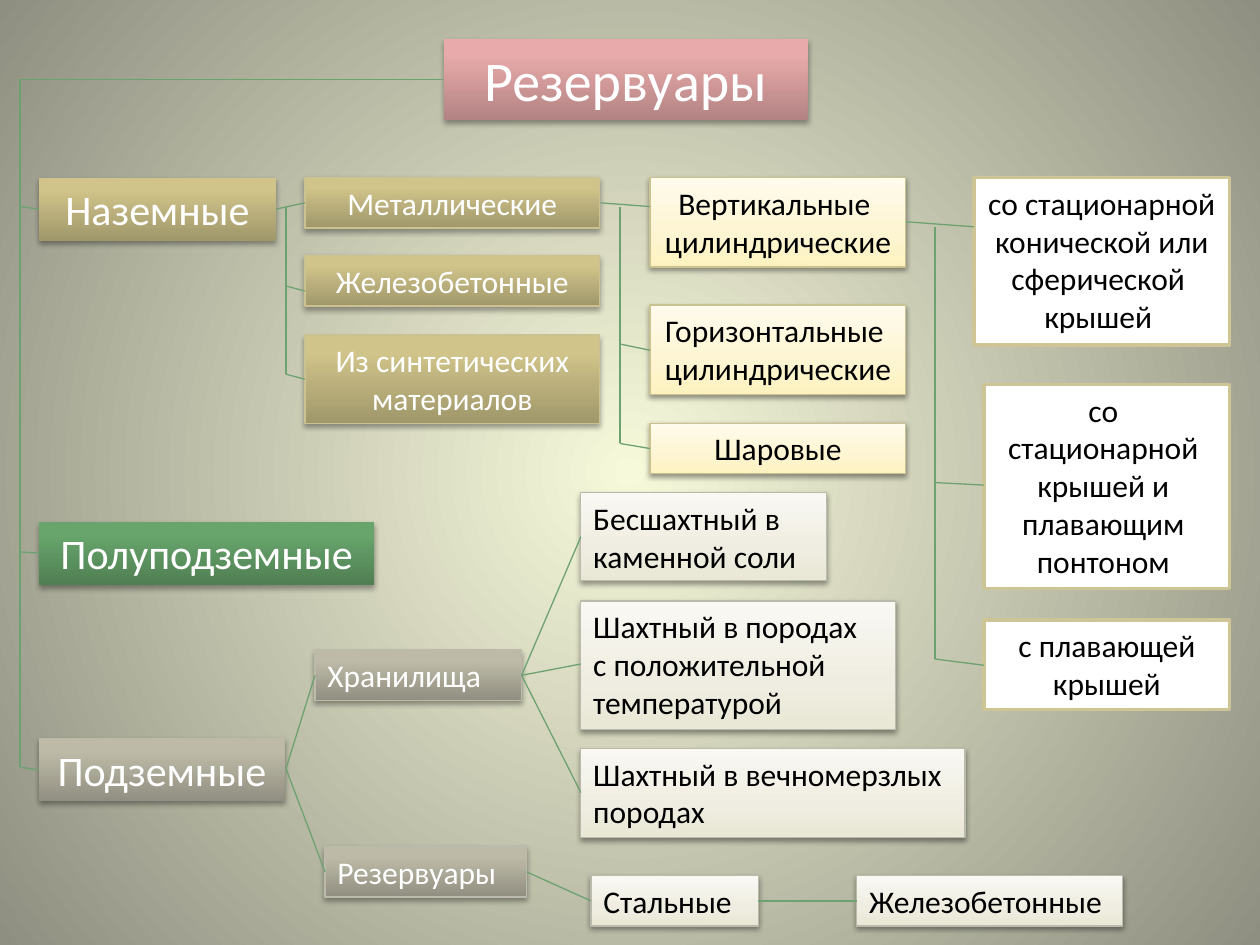
from lxml import etree
from pptx import Presentation
from pptx.dml.color import RGBColor
from pptx.enum.shapes import MSO_CONNECTOR, MSO_SHAPE
from pptx.enum.text import MSO_ANCHOR, MSO_AUTO_SIZE, PP_ALIGN
from pptx.oxml.ns import qn
from pptx.util import Emu, Pt

PX = 9144  # 100 px to the inch
RECT = MSO_SHAPE.RECTANGLE
STRAIGHT, ELBOW = MSO_CONNECTOR.STRAIGHT, MSO_CONNECTOR.ELBOW
TOP, GROW = MSO_ANCHOR.TOP, MSO_AUTO_SIZE.SHAPE_TO_FIT_TEXT
LEFT, CENTER = PP_ALIGN.LEFT, PP_ALIGN.CENTER

COLORS = {"white": "FFFFFF", "black": "000000", "link": "6EA172",
          "sand_line": "CBC292", "gray_line": "BCBAAB", "roof_line": "CEC597"}
GRADIENTS = {
    "back": [(0, "F7F9DB"), (100, "8E8F80")],
    "rose": [(0, "B38383"), (80, "E8AAAA"), (100, "EAAAAA")],
    "sand": [(0, "A0976B"), (80, "D0C48A"), (100, "D2C68A")],
    "green": [(0, "507F53"), (80, "67A56C"), (100, "67A76C")],
    "gray": [(0, "918F81"), (80, "BDBAA7"), (100, "BEBBA7")],
    "cream": [(0, "FDF2BF"), (35, "FDF5D1"), (100, "FFFBEC")],
    "pale": [(0, "E9E7D5"), (35, "EFEDE1"), (100, "F9F8F3")],
}
# Shadow: distance in EMU, opacity in percent
STRONG, SOFT = (23000, 35), (20000, 38)


def style(fill, color, size, align=CENTER, line=None, width=0.75, shadow=STRONG):
    return {"fill": fill, "color": color, "size": size, "align": align,
            "line": line, "width": width, "shadow": shadow}


STYLES = {
    "title": style("rose", "white", 32),
    "ground": style("sand", "white", 24),
    "half": style("green", "white", 24),
    "under": style("gray", "white", 24),
    "material": style("sand", "white", 18, line="sand_line"),
    "form": style("cream", "black", 18, line="sand_line", shadow=SOFT),
    "roof": style(None, "black", 18, line="roof_line", width=2, shadow=None),
    "store": style("gray", "white", 18, LEFT, "gray_line"),
    "kind": style("pale", "black", 18, LEFT, "gray_line", shadow=SOFT),
}

# Style, left, top, width, height, paragraphs
BOXES = [
    ("title", 352, 31, 289, 64, ["Резервуары"]),
    ("ground", 31, 141, 188, 50, ["Наземные"]),
    ("half", 31, 414, 266, 50, ["Полуподземные"]),
    ("under", 31, 586, 195, 50, ["Подземные"]),
    ("material", 242, 141, 234, 40, ["Металлические"]),
    ("material", 242, 203, 234, 40, ["Железобетонные"]),
    ("material", 242, 266, 234, 70, ["Из синтетических материалов"]),
    ("form", 516, 141, 203, 71, ["Вертикальные ", "цилиндрические"]),
    ("form", 516, 242, 203, 71, ["Горизонтальные ", "цилиндрические"]),
    ("form", 516, 336, 203, 40, ["Шаровые"]),
    ("roof", 773, 141, 203, 133,
     ["со стационарной конической или сферической ", "крышей "]),
    ("roof", 781, 305, 195, 162,
     ["со ", "стационарной ", "крышей и ", "плавающим ", "понтоном "]),
    ("roof", 781, 492, 195, 71, ["с плавающей крышей"]),
    ("store", 250, 516, 164, 40, ["Хранилища"]),
    ("store", 258, 672, 160, 40, ["Резервуары"]),
    ("kind", 461, 391, 195, 70, ["Бесшахтный в", "каменной соли"]),
    ("kind", 461, 477, 250, 102,
     ["Шахтный в породах", "с положительной", "температурой"]),
    ("kind", 461, 594, 305, 71, ["Шахтный в вечномерзлых", "породах"]),
    ("kind", 469, 695, 133, 40, ["Стальные"]),
    ("kind", 680, 695, 211, 40, ["Железобетонные"]),
]

# Trunk x, trunk top, child left edge, (y on trunk, y at child)
BRACKETS = [
    (227, 164, 242, [(227, 231), (297, 301)]),
    (492, 164, 516, [(273, 278), (352, 356)]),
    (742, 180, 781, [(383, 385), (523, 528)]),
]

# Start point, end points
FANS = [
    ((219, 166), [(242, 161)]),
    ((477, 161), [(516, 164)]),
    ((719, 176), [(773, 180)]),
    ((227, 610), [(250, 536), (258, 692)]),
    ((414, 536), [(461, 426), (461, 527), (461, 629)]),
    ((418, 692), [(469, 715)]),
    ((602, 715), [(680, 715)]),
]
ROOT_X, ROOT_Y, ROOT_END = 16, 63, 609
ROOT_TWIGS = [(164, 166), (438, 439), (609, 611)]


def px(*values):
    return [Emu(v * PX) for v in values]


def rgb(name):
    return RGBColor.from_string(COLORS[name])


def add_child(parent, tag, **attrs):
    return etree.SubElement(parent, qn(tag), {k: str(v) for k, v in attrs.items()})


def set_gradient(fill, element, name, radial=False):
    """Put a gradient in the place of a solid fill."""
    fill.solid()
    solid = element.find(".//" + qn("a:solidFill"))
    grad = etree.Element(qn("a:gradFill"), rotWithShape="1")
    stops = add_child(grad, "a:gsLst")
    for pos, color in GRADIENTS[name]:
        stop = add_child(stops, "a:gs", pos=pos * 1000)
        add_child(stop, "a:srgbClr", val=color)
    if radial:
        circle = add_child(grad, "a:path", path="circle")
        add_child(circle, "a:fillToRect", l=50000, t=50000, r=50000, b=50000)
    else:
        add_child(grad, "a:lin", ang=16200000, scaled=0)
    solid.getparent().replace(solid, grad)


def add_shadow(sp, dist, alpha):
    effects = sp._element.spPr.find(qn("a:effectLst"))
    outer = add_child(effects, "a:outerShdw", blurRad=40000, dist=dist,
                      dir=5400000, rotWithShape=0)
    color = add_child(outer, "a:srgbClr", val=COLORS["black"])
    add_child(color, "a:alpha", val=alpha * 1000)


def add_box(slide, look, bounds, lines):
    sp = slide.shapes.add_shape(RECT, *px(*bounds))
    if look["fill"]:
        set_gradient(sp.fill, sp._element.spPr, look["fill"])
    else:
        sp.fill.solid()
        sp.fill.fore_color.rgb = rgb("white")
    if look["line"]:
        sp.line.color.rgb = rgb(look["line"])
        sp.line.width = Pt(look["width"])
    else:
        sp.line.fill.background()
    sp.shadow.inherit = False
    if look["shadow"]:
        add_shadow(sp, *look["shadow"])

    tf = sp.text_frame
    for key, value in {"word_wrap": True, "vertical_anchor": TOP, "auto_size": GROW}.items():
        setattr(tf, key, value)
    for i, line in enumerate(lines):
        p = tf.add_paragraph() if i else tf.paragraphs[0]
        p.alignment = look["align"]
        r = p.add_run()
        r.text = line
        for key, value in {"name": "Calibri", "size": Pt(look["size"])}.items():
            setattr(r.font, key, value)
        r.font.color.rgb = rgb(look["color"])


def add_link(slide, start, end, kind=STRAIGHT):
    link = slide.shapes.add_connector(kind, *px(*start, *end))
    link.line.color.rgb = rgb("link")
    link.line.width = Pt(0.75)
    spPr = link._element.spPr
    add_child(spPr, "a:effectLst")
    if kind == ELBOW:  # a single corner
        spPr.find(qn("a:prstGeom")).set("prst", "bentConnector2")


def add_twigs(slide, x, child_x, twigs):
    for trunk_y, child_y in twigs:
        add_link(slide, (x, trunk_y), (child_x, child_y))


def main():
    prs = Presentation()
    prs.slide_width, prs.slide_height = px(1000, 750)
    slide = prs.slides.add_slide(prs.slide_layouts[6])
    set_gradient(slide.background.fill, slide._element, "back", radial=True)

    # Boxes
    for name, *bounds, lines in BOXES:
        add_box(slide, STYLES[name], bounds, lines)

    # Trunk from the title to the three main groups
    add_link(slide, (352, ROOT_Y), (ROOT_X, ROOT_END), ELBOW)
    add_twigs(slide, ROOT_X, 31, ROOT_TWIGS)

    # Brackets and fans between the levels
    for x, top, child_x, twigs in BRACKETS:
        add_link(slide, (x, top), (x, twigs[-1][0]))
        add_twigs(slide, x, child_x, twigs)
    for start, ends in FANS:
        for end in ends:
            add_link(slide, start, end)

    prs.save("out.pptx")


if __name__ == "__main__":
    main()
